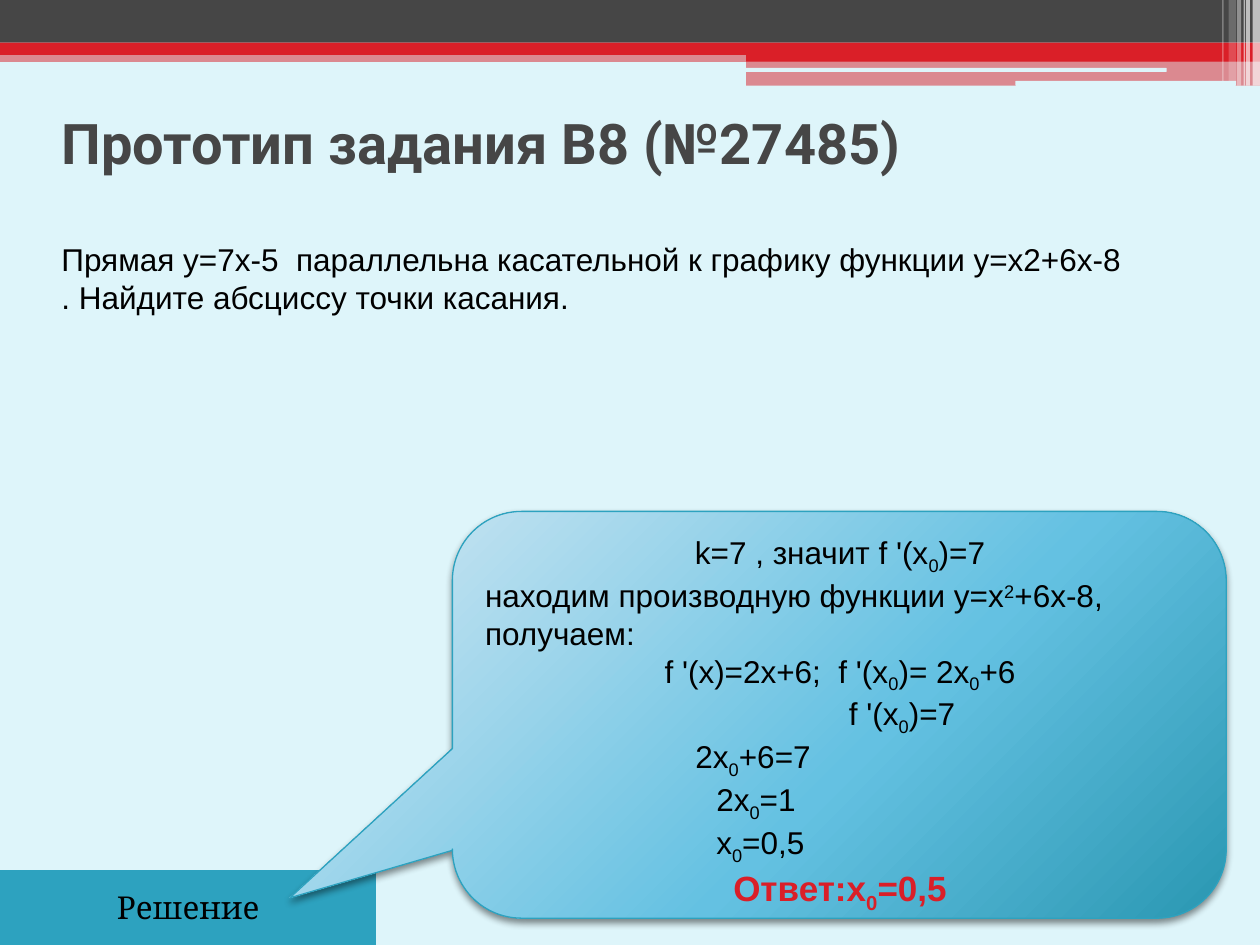
from pptx import Presentation
from pptx.dml.color import RGBColor
from pptx.enum.shapes import MSO_SHAPE
from pptx.enum.text import MSO_ANCHOR, PP_ALIGN
from pptx.oxml import parse_xml
from pptx.oxml.ns import nsdecls, qn
from pptx.util import Cm, Pt

RECT, ROUND = MSO_SHAPE.RECTANGLE, MSO_SHAPE.ROUNDED_RECTANGLE
BUTTON = MSO_SHAPE.ACTION_BUTTON_CUSTOM
CALLOUT = MSO_SHAPE.ROUNDED_RECTANGULAR_CALLOUT
LEFT, CENTER = PP_ALIGN.LEFT, PP_ALIGN.CENTER
TOP, MIDDLE = MSO_ANCHOR.TOP, MSO_ANCHOR.MIDDLE
PALE, DARK, RED, WHITE, BLACK = "DEF5FA", "464646", "DA1F28", "FFFFFF", "000000"
TEAL = "2DA2BF"
SUB, SUPER = -25000, 30000


def add_block(preset, left, top, width, height, color, opacity=100):
    block = slide.shapes.add_shape(preset, Cm(left), Cm(top), Cm(width), Cm(height))
    block.shadow.inherit = False
    block.fill.solid()
    block.fill.fore_color.rgb = RGBColor.from_string(color)
    block.line.fill.background()
    if opacity < 100:
        srgb = block.fill._xPr.find(".//" + qn("a:srgbClr"))
        srgb.append(parse_xml(f'<a:alpha {nsdecls("a")} val="{opacity * 1000}"/>'))
    return block


def add_run(paragraph, text, size, font, color, bold=False, baseline=0):
    run = paragraph.add_run()
    run.text = text
    run.font.size = Pt(size)
    run.font.name = font
    run.font.bold = bold
    run.font.color.rgb = RGBColor.from_string(color)
    if baseline:
        run.font._element.set("baseline", str(baseline))


prs = Presentation()
prs.slide_width, prs.slide_height = Cm(25.4), Cm(19.05)
slide = prs.slides.add_slide(prs.slide_layouts[5])
slide.background.fill.solid()
slide.background.fill.fore_color.rgb = RGBColor.from_string(PALE)

# Header bands
for band in [
    (RECT, 0, 1.02, 25.4, 0.23, RED, 50),
    (RECT, 0, 0, 25.4, 0.86, DARK),
    (RECT, 0, 0.86, 25.4, 0.25, RED),
    (RECT, 15.04, 0.99, 10.36, 0.25, RED),
    (RECT, 15.04, 1.22, 10.36, 0.51, RED, 50),
    (ROUND, 15.01, 1.37, 8.51, 0.08, PALE),
    (ROUND, 20.47, 1.63, 4.45, 0.1, PALE),
]:
    add_block(*band)

# Light stripes in the top right corner
for left, width, height, opacity in [
    (25.25, 0.15, 1.73, 65),
    (25.12, 0.08, 1.73, 65),
    (25.07, 0.03, 1.73, 60),
    (24.94, 0.08, 1.73, 40),
    (24.77, 0.15, 1.63, 20),
    (24.64, 0.03, 1.63, 30),
]:
    add_block(RECT, left, 0, width, height, WHITE, opacity)

# Title
title = slide.shapes.title
title.left, title.top, title.width, title.height = Cm(0.99), Cm(1.57), Cm(22.86), Cm(2.59)
title.text_frame.vertical_anchor = MIDDLE
heading = title.text_frame.paragraphs[0]
heading.alignment = LEFT
add_run(heading, "Прототип задания B8 (№27485)", 32, "Roboto", DARK, bold=True)

# Solution button
button = add_block(BUTTON, 0, 17.53, 7.59, 1.52, TEAL)
button.text_frame.vertical_anchor = MIDDLE
button_label = button.text_frame.paragraphs[0]
button_label.alignment = CENTER
add_run(button_label, "Решение", 18, "Cambria", BLACK)

# Callout with radial gradient and soft shadow
callout = add_block(CALLOUT, 9.12, 10.31, 15.6, 8.2, TEAL)
for index, value in enumerate([-0.71, 0.45, 0.17]):
    callout.adjustments[index] = value
callout.line.color.rgb = RGBColor.from_string(TEAL)
callout.line.width = Pt(0.75)
stops = "".join(
    f'<a:gs pos="{position * 1000}"><a:srgbClr val="{color}"/></a:gs>'
    for position, color in [(0, "BFE1F0"), (55, "64C1E2"), (100, "2A97B2")]
)
gradient = parse_xml(
    f'<a:gradFill {nsdecls("a")} rotWithShape="1"><a:gsLst>{stops}</a:gsLst>'
    '<a:path path="circle"><a:fillToRect l="-40000" t="-90000" r="140000" b="190000"/>'
    "</a:path></a:gradFill>"
)
callout_props = callout._element.spPr
callout_props.replace(callout_props.find(qn("a:solidFill")), gradient)
callout_props.find(qn("a:effectLst")).append(parse_xml(
    f'<a:outerShdw {nsdecls("a")} blurRad="{Pt(4)}" dist="{Pt(2)}" dir="5400000" '
    f'rotWithShape="0"><a:srgbClr val="{BLACK}"><a:alpha val="45000"/></a:srgbClr></a:outerShdw>'
))

# Problem statement
problem = slide.shapes.add_textbox(Cm(0.99), Cm(4.72), Cm(22.02), Cm(1.78)).text_frame
problem.word_wrap = True
add_run(
    problem.paragraphs[0],
    "Прямая y=7x-5  параллельна касательной к графику функции y=x2+6x-8 "
    ". Найдите абсциссу точки касания.",
    18, "Arial", BLACK,
)

# Solution steps: alignment, left margin in cm, pieces of text with their baseline
ZERO = ("0", SUB)
steps = [
    (CENTER, 0, [("k=7 , значит f '(x", 0), ZERO, (")=7", 0)]),
    (LEFT, 0, [("находим производную функции y=x", 0), ("2", SUPER), ("+6x-8, получаем:", 0)]),
    (CENTER, 0, [("f '(x)=2x+6;  f '(x", 0), ZERO, (")= 2x", 0), ZERO, ("+6", 0)]),
    (CENTER, 2.5, [("f '(x", 0), ZERO, (")=7", 0)]),
    (LEFT, 4.24, [("2x", 0), ZERO, ("+6=7", 0)]),
    (LEFT, 4.66, [("2x", 0), ZERO, ("=1", 0)]),
    (LEFT, 4.66, [("x", 0), ZERO, ("=0,5", 0)]),
    (CENTER, 0, [("Ответ:x", 0), ZERO, ("=0,5", 0)]),
]
solution = slide.shapes.add_textbox(Cm(9.53), Cm(10.62), Cm(14.81), Cm(7.8)).text_frame
solution.word_wrap = True
solution.vertical_anchor = TOP
for number, (alignment, margin, pieces) in enumerate(steps, 1):
    step = solution.paragraphs[0] if number == 1 else solution.add_paragraph()
    step.alignment = alignment
    if margin:
        step._p.get_or_add_pPr().set("marL", str(Cm(margin)))
    is_answer = number == len(steps)
    size, color = (20, RED) if is_answer else (18, BLACK)
    for text, baseline in pieces:
        add_run(step, text, size, "Arial", color, is_answer, baseline)

prs.save("out.pptx")
